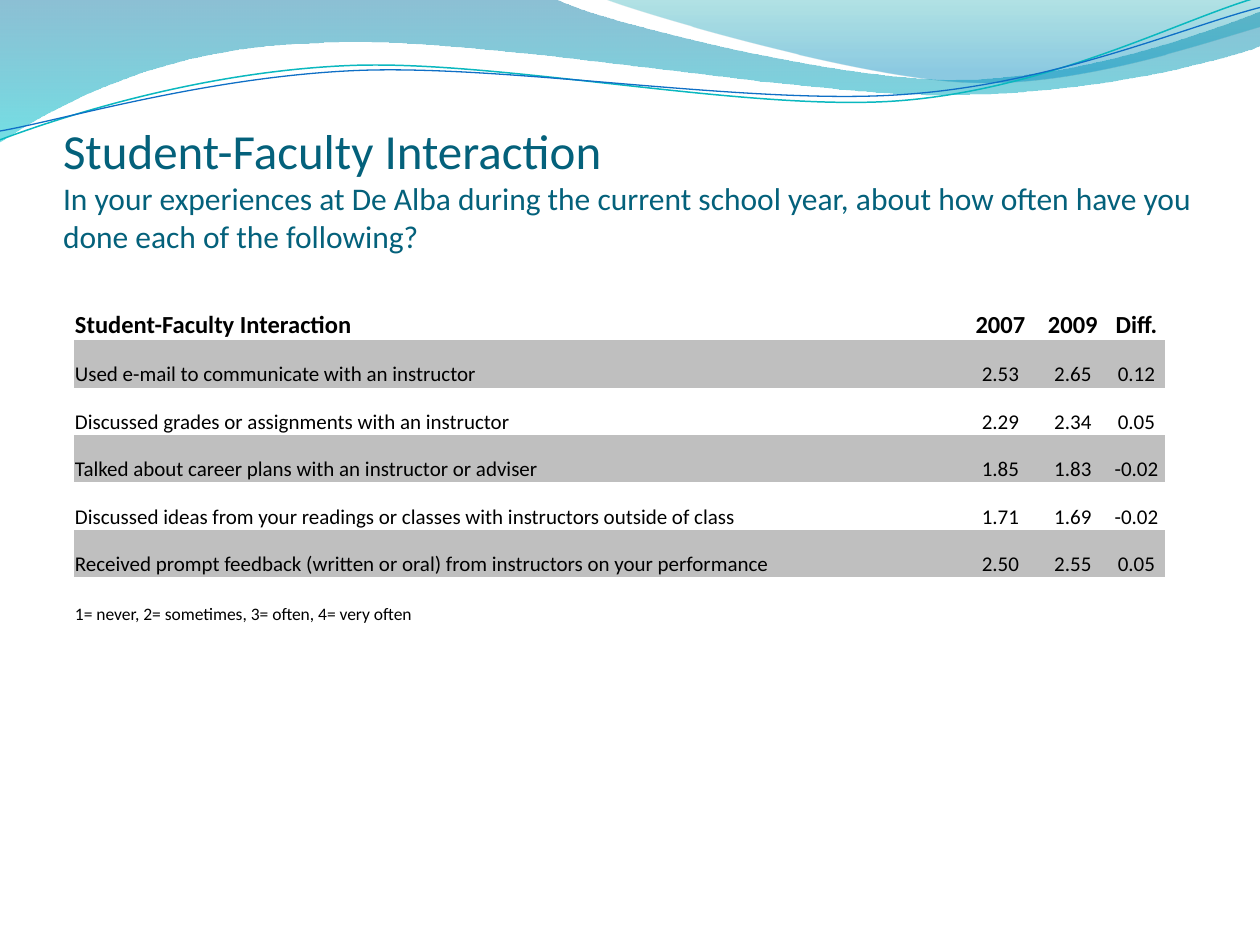
from math import cos, radians, sin

from lxml.etree import SubElement
from pptx import Presentation
from pptx.dml.color import RGBColor
from pptx.enum.text import MSO_ANCHOR, PP_ALIGN
from pptx.oxml.ns import qn
from pptx.util import Inches, Pt

FONT = "Calibri"
NO_GRID_STYLE = "{2D5ABB26-0587-4C30-8999-92F81FD0307C}"
TILT = 357.3

BANDS = [
    {
        "start": (0, 0),
        "edges": [
            [(4.4, -0.01)],
            [(4.76, 0.17), (6.64, 0.63), (7.58, 0.63)],
            [(8.53, 0.63), (9.58, 0.26), (10, 0.09)],
            [(10.01, 0.36)],
            [(9.83, 0.44), (8.7, 0.76), (7.46, 0.75)],
            [(6.22, 0.75), (3.82, 0.28), (2.57, 0.34)],
            [(1.29, 0.36), (0.46, 0.83), (-0.01, 1.13)],
            [(0, 0)],
        ],
        "stops": [(0, "0074A1", 45), (1, "00C6CF", 55)],
    },
    {
        "start": (4.79, -0.01),
        "edges": [
            [(5.09, 0.11), (6.82, 0.62), (7.69, 0.65)],
            [(8.56, 0.69), (9.61, 0.32), (10, 0.21)],
            [(10, 0)],
            [(4.79, -0.01)],
        ],
        "stops": [(0, "00A1A9", 30), (0.8, "008BBF", 45)],
    },
]
STRANDS = [
    {
        "start": (0, 1.11),
        "edges": [
            [(0.48, 0.93), (1.58, 0.57), (2.77, 0.52)],
            [(3.95, 0.47), (5.93, 0.89), (7.13, 0.8)],
            [(8.33, 0.71), (9.38, 0.15), (9.98, -0.02)],
        ],
        "center": (4.99, 0.575),
        "color": "0AB8BF",
        "width": 0.85,
    },
    {
        "start": (0, 1.04),
        "edges": [
            [(0.47, 0.96), (1.64, 0.61), (2.83, 0.56)],
            [(4.03, 0.51), (5.97, 0.84), (7.17, 0.75)],
            [(8.36, 0.67), (9.41, 0.21), (10, 0.06)],
        ],
        "center": (5, 0.59),
        "color": "0F6FC6",
        "width": 0.75,
    },
]
TITLE = "Student-Faculty Interaction"
QUESTION = (
    "In your experiences at De Alba during the current school year, "
    "about how often have you done each of the following?"
)
ROWS = [
    ("Student-Faculty Interaction", "2007", "2009", "Diff."),
    ("Used e-mail to communicate with an instructor", "2.53", "2.65", "0.12"),
    ("Discussed grades or assignments with an instructor", "2.29", "2.34", "0.05"),
    ("Talked about career plans with an instructor or adviser", "1.85", "1.83", "-0.02"),
    ("Discussed ideas from your readings or classes with instructors outside of class",
     "1.71", "1.69", "-0.02"),
    ("Received prompt feedback (written or oral) from instructors on your performance",
     "2.50", "2.55", "0.05"),
    ("1= never, 2= sometimes, 3= often, 4= very often", "", "", ""),
]
COLUMN_WIDTHS = [7.06, 0.59, 0.56, 0.45]
HEADER_HEIGHT = Inches(0.45)


def color(value):
    return RGBColor.from_string(value)


def apply(target, values):
    for name, value in values.items():
        setattr(target, name, value)


def format_span(span, size, value, bold=False):
    apply(span.font, {"name": FONT, "size": Pt(size), "bold": bold})
    span.font.color.rgb = color(value)


def turn(point, center, degrees):
    angle = radians(degrees)
    x, y = point[0] - center[0], point[1] - center[1]
    return (center[0] + x * cos(angle) - y * sin(angle),
            center[1] + x * sin(angle) + y * cos(angle))


def bend_edges(shape, edges):
    lines = iter(list(shape.element.iter(qn("a:lnTo"))))
    for edge in edges:
        first, *others = [next(lines) for point in edge]
        if others:
            first.tag = qn("a:cubicBezTo")
            for line in others:
                first.append(line[0])
                line.getparent().remove(line)


def add_outline(shapes, box, start, edges, close):
    left, top = box[:2]
    points = [start] + [point for edge in edges for point in edge]
    places = [(left + Inches(x), top + Inches(y)) for x, y in points]
    builder = shapes.build_freeform(*places[0], scale=1.0)
    builder.add_line_segments(places[1:], close=close)
    shape = builder.convert_to_shape()
    shape.shadow.inherit = False
    bend_edges(shape, edges)
    return shape


def add_band(shapes, box, start, edges, stops):
    shape = add_outline(shapes, box, start, edges, True)
    shape.line.fill.background()
    shape.fill.gradient()
    shape.fill.gradient_angle = 270
    for stop, (position, value, opacity) in zip(shape.fill.gradient_stops, stops):
        stop.position = position
        stop.color.rgb = color(value)
    for tag, (position, value, opacity) in zip(shape.element.iter(qn("a:srgbClr")), stops):
        SubElement(tag, qn("a:alpha"), val=str(opacity * 1000))


def add_strand(shapes, box, strand):
    center = strand["center"]
    start = turn(strand["start"], center, -TILT)
    edges = [[turn(point, center, -TILT) for point in edge] for edge in strand["edges"]]
    shape = add_outline(shapes, box, start, edges, False)
    shape.rotation = TILT
    shape.fill.background()
    shape.line.color.rgb = color(strand["color"])
    shape.line.width = Pt(strand["width"])


def add_waves(page, box):
    for band in BANDS:
        add_band(page.shapes, box, **band)
    group = page.shapes.add_group_shape()
    for strand in STRANDS:
        add_strand(group.shapes, box, strand)


def place_title(page, box):
    title = page.shapes.title
    title.element.getparent().append(title.element)
    apply(title, dict(zip(("left", "top", "width", "height"), box)))
    frame = title.text_frame
    apply(frame, {
        "margin_left": 0, "margin_right": 0, "margin_top": Inches(0.05),
        "margin_bottom": 0, "word_wrap": True, "vertical_anchor": MSO_ANCHOR.BOTTOM,
    })
    para = frame.paragraphs[0]
    para.alignment = PP_ALIGN.LEFT
    span = para.add_run()
    span.text = TITLE
    format_span(span, 28, "04617B")
    para.add_line_break()
    span = para.add_run()
    span.text = QUESTION
    format_span(span, 18, "04617B")


def fill_cell(cell, text, size, bold, shaded, centered):
    apply(cell, {
        "margin_left": Inches(0.01), "margin_right": Inches(0.01),
        "margin_top": Inches(0.01), "margin_bottom": 0,
        "vertical_anchor": MSO_ANCHOR.BOTTOM,
    })
    if shaded:
        cell.fill.solid()
        cell.fill.fore_color.rgb = color("BFBFBF")
    else:
        cell.fill.background()
    if text:
        para = cell.text_frame.paragraphs[0]
        para.alignment = PP_ALIGN.CENTER if centered else PP_ALIGN.LEFT
        span = para.add_run()
        span.text = text
        format_span(span, size, "000000", bold)


def add_results(page, box):
    table = page.shapes.add_table(len(ROWS), len(COLUMN_WIDTHS), *box).table
    apply(table, {"first_row": False, "horz_banding": False})
    next(table._tbl.iter(qn("a:tableStyleId"))).text = NO_GRID_STYLE
    for column, width in zip(table.columns, COLUMN_WIDTHS):
        column.width = Inches(width)
    last = len(ROWS) - 1
    row_height = (box[3] - HEADER_HEIGHT) // last
    for index, texts in enumerate(ROWS):
        table.rows[index].height = row_height if index else HEADER_HEIGHT
        size = {0: 14, last: 10}.get(index, 12)
        for place, text in enumerate(texts):
            fill_cell(table.cell(index, place), text, size, index == 0,
                      index % 2 == 1, place > 0)


def main():
    deck = Presentation()
    deck.slide_width, deck.slide_height = Inches(10), Inches(7.5)
    page = deck.slides.add_slide(deck.slide_layouts[5])
    add_waves(page, (0, 0, Inches(10), Inches(1.13)))
    place_title(page, (Inches(0.5), Inches(0.77), Inches(9.08), Inches(1.25)))
    add_results(page, (Inches(0.585), Inches(2.25), Inches(8.66), Inches(2.71)))
    deck.save("out.pptx")


if __name__ == "__main__":
    main()
